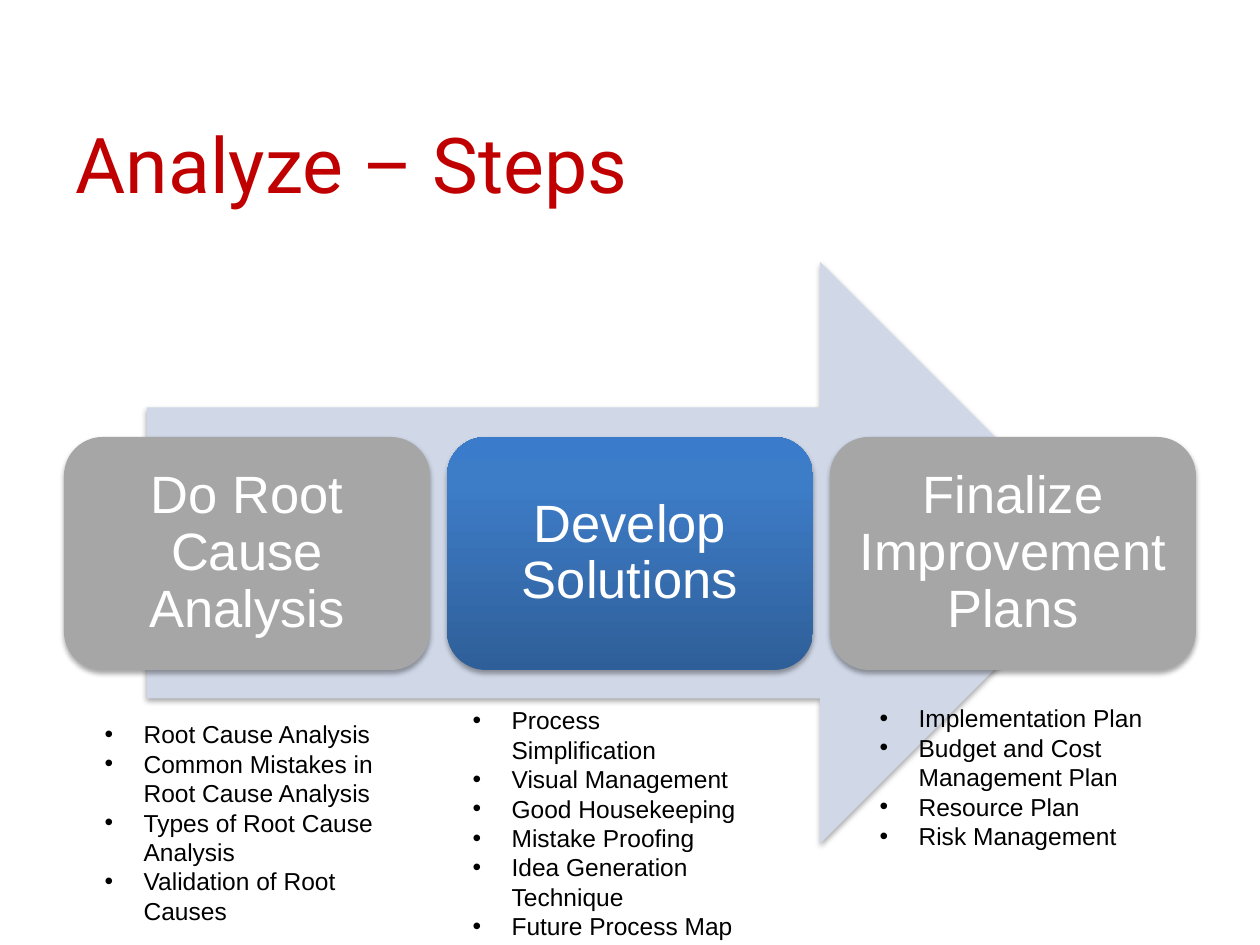
from copy import deepcopy
from lxml import etree
from pptx import Presentation
from pptx.dml.color import RGBColor
from pptx.enum.shapes import MSO_SHAPE
from pptx.enum.text import MSO_ANCHOR, MSO_AUTO_SIZE, PP_ALIGN
from pptx.oxml.ns import qn
from pptx.util import Pt

SCALE = 914400 / 126
WIDE, HIGH = 1260, 945
ARROW, ROUND = MSO_SHAPE.RIGHT_ARROW, MSO_SHAPE.ROUNDED_RECTANGLE
TOP, MIDDLE = MSO_ANCHOR.TOP, MSO_ANCHOR.MIDDLE
LEFT, CENTER = PP_ALIGN.LEFT, PP_ALIGN.CENTER
GROW, FIXED = MSO_AUTO_SIZE.SHAPE_TO_FIT_TEXT, MSO_AUTO_SIZE.NONE

RED = RGBColor(0xC0, 0x00, 0x00)
PALE = RGBColor(0xD0, 0xD8, 0xE8)
GRAY = RGBColor(0xA6, 0xA6, 0xA6)
WHITE = RGBColor(0xFF, 0xFF, 0xFF)
BLACK = RGBColor(0x00, 0x00, 0x00)
BLUES = [
    (0, RGBColor(0x2F, 0x5F, 0x99)),
    (0.8, RGBColor(0x3D, 0x7C, 0xC7)),
    (1, RGBColor(0x3A, 0x7C, 0xCB)),
]

STEPS = [
    ("Do Root Cause Analysis", GRAY),
    ("Develop Solutions", BLUES),
    ("Finalize Improvement Plans", GRAY),
]
LISTS = [
    (1, (92, 713, 304, 221), [
        "Root Cause Analysis",
        "Common Mistakes in Root Cause Analysis",
        "Types of Root Cause Analysis",
        "Validation of Root Causes",
    ]),
    (2, (460, 699, 304, 251), [
        "Process Simplification",
        "Visual Management",
        "Good Housekeeping",
        "Mistake Proofing",
        "Idea Generation Technique",
        "Future Process Map",
    ]),
    (4, (867, 697, 304, 161), [
        "Implementation Plan",
        "Budget and Cost Management Plan",
        "Resource Plan",
        "Risk Management",
    ]),
]
SPARE = 3


def px(num):
    return round(num * SCALE)


class Deck:
    font = "Arial"

    def __init__(self):
        self.file = Presentation()
        self.file.slide_width, self.file.slide_height = px(WIDE), px(HIGH)
        self.slide = self.file.slides.add_slide(self.file.slide_layouts[4])
        self.slots = {p.placeholder_format.idx: p for p in self.slide.placeholders}
        self.drop(SPARE)
        self.group = self.slide.shapes.add_group_shape()

    def drop(self, idx):
        node = self.slots.pop(idx).element
        node.getparent().remove(node)

    def place(self, shape, box):
        shape.left, shape.top, shape.width, shape.height = map(px, box)

    def label(self, para, text, size, color, font=None):
        run = para.add_run()
        run.text = text
        run.font.name = font or self.font
        run.font.size = Pt(size)
        run.font.bold = False
        run.font.color.rgb = color

    def title(self, text, box):
        shape = self.slots[0]
        self.place(shape, box)
        frame = shape.text_frame
        frame.auto_size = FIXED
        frame.vertical_anchor = MIDDLE
        para = frame.paragraphs[0]
        para.alignment = LEFT
        self.label(para, text, 44, RED, "Roboto")

    def shade(self, shape):
        shape.shadow.inherit = False
        node = shape.element.spPr.find(qn("a:effectLst"))
        cast = etree.SubElement(node, qn("a:outerShdw"), blurRad=str(Pt(3.1)),
                                dist=str(Pt(1.8)), dir="5400000", rotWithShape="0")
        tint = etree.SubElement(cast, qn("a:srgbClr"), val=str(BLACK))
        etree.SubElement(tint, qn("a:alpha"), val="35000")

    def blend(self, shape, stops):
        shape.fill.gradient()
        shape.fill.gradient_angle = 90
        node = shape.element.spPr.find(".//" + qn("a:gsLst"))
        node.append(deepcopy(node[-1]))
        for stop, (pos, color) in zip(shape.fill.gradient_stops, stops):
            stop.position = pos
            stop.color.rgb = color

    def block(self, kind, box, paint):
        shape = self.group.shapes.add_shape(kind, *map(px, box))
        if isinstance(paint, list):
            self.blend(shape, paint)
        else:
            shape.fill.solid()
            shape.fill.fore_color.rgb = paint
        shape.line.fill.background()
        self.shade(shape)
        return shape

    def step(self, text, box, paint):
        frame = self.block(ROUND, box, paint).text_frame
        frame.word_wrap = True
        frame.vertical_anchor = MIDDLE
        frame.margin_left = frame.margin_right = px(4)
        frame.margin_top = frame.margin_bottom = px(4)
        para = frame.paragraphs[0]
        para.alignment = CENTER
        para.line_spacing = 0.9
        self.label(para, text, 30, WHITE)

    def items(self, idx, box, texts):
        shape = self.slots[idx]
        node = shape.element
        node.getparent().append(node)
        self.place(shape, box)
        frame = shape.text_frame
        frame.word_wrap = True
        frame.auto_size = GROW
        frame.vertical_anchor = TOP
        for num, text in enumerate(texts):
            para = frame.add_paragraph() if num else frame.paragraphs[0]
            para.space_before = Pt(0)
            form = para._p.get_or_add_pPr()
            form.set("marL", str(px(39)))
            form.set("indent", str(px(-39)))
            etree.SubElement(form, qn("a:buFont"), typeface=self.font)
            etree.SubElement(form, qn("a:buChar"), char="•")
            self.label(para, text, 14, BLACK)


def main():
    deck = Deck()
    deck.title("Analyze – Steps", (63, 84, 955, 158))
    deck.block(ARROW, (147, 262, 964, 582), PALE)
    for num, (text, paint) in enumerate(STEPS):
        deck.step(text, (64 + 383 * num, 437, 366, 233), paint)
    for idx, box, texts in LISTS:
        deck.items(idx, box, texts)
    deck.file.save("out.pptx")


if __name__ == "__main__":
    main()
